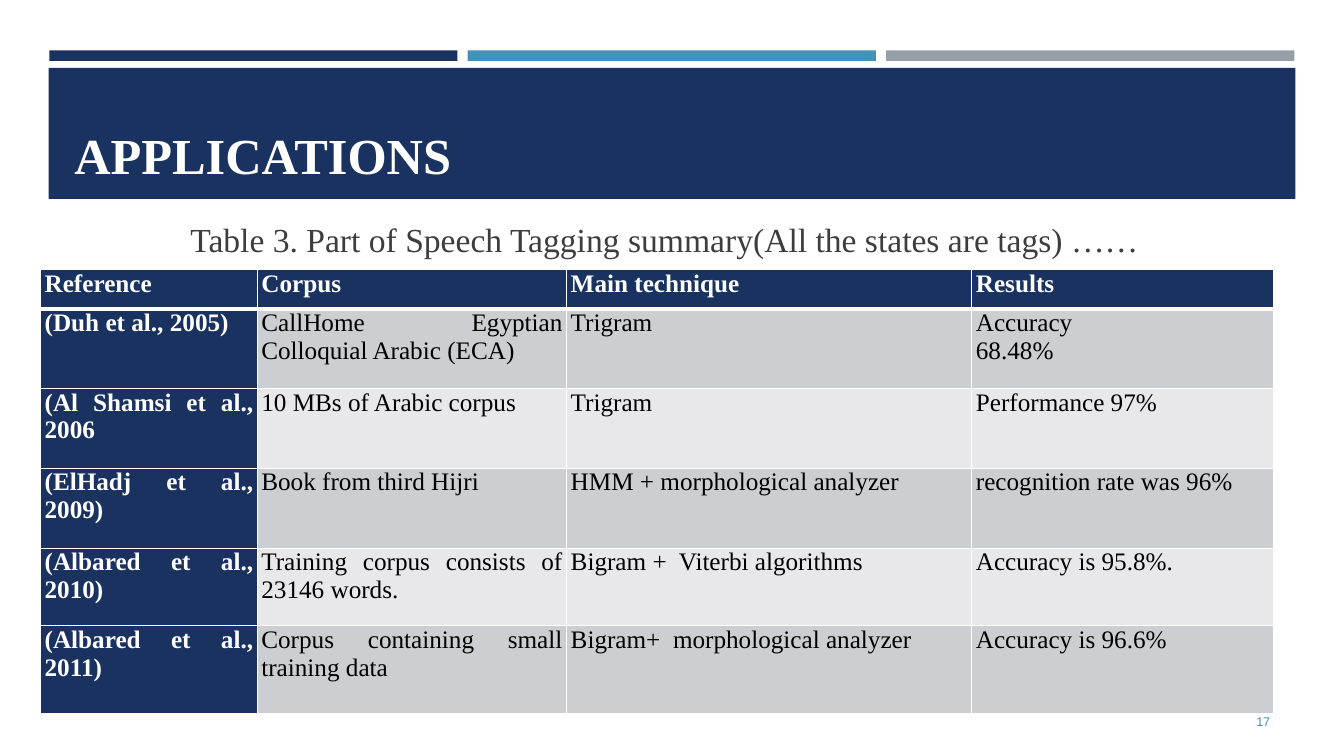
from lxml import etree
from pptx import Presentation
from pptx import util as u
from pptx.dml.color import RGBColor
from pptx.enum import shapes, text
from pptx.oxml import ns

Pt = u.Pt
SERIF, SANS = "Times New Roman", "Arial"
HUES = {
    "navy": "1A3260", "blue": "4590B8", "gray": "969FA7", "white": "FFFFFF",
    "black": "000000", "ink": "3D3D3D", "dark": "CDCED2", "light": "E8E8EA",
}
COLS = [154.8, 221, 289.4, 215.3]
ROWS = [28, 57, 57, 57, 55.5, 63]
DATA = [
    ["Reference", "Corpus", "Main technique", "Results"],
    ["(Duh et al., 2005)", "CallHome Egyptian Colloquial Arabic (ECA)",
     "Trigram", "Accuracy\n68.48%"],
    ["(Al Shamsi et al., 2006", "10 MBs of Arabic corpus",
     "Trigram", "Performance 97%"],
    ["(ElHadj et al., 2009)", "Book from third Hijri",
     "HMM + morphological analyzer", "recognition rate was 96%"],
    ["(Albared et al., 2010)", "Training corpus consists of 23146 words.",
     "Bigram +  Viterbi algorithms", "Accuracy is 95.8%."],
    ["(Albared et al., 2011)", "Corpus containing small training data",
     "Bigram+  morphological analyzer", "Accuracy is 96.6%"],
]


def tint(name):
    return RGBColor.from_string(HUES[name])


def add_run(para, words, size, hue, font=SERIF, bold=False):
    run = para.add_run()
    run.text = words
    run.font.size = Pt(size)
    run.font.name = font
    run.font.bold = bold
    run.font.color.rgb = tint(hue)


def add_bar(slide, box, hue):
    bar = slide.shapes.add_shape(
        shapes.MSO_SHAPE.RECTANGLE, *[Pt(n) for n in box])
    bar.shadow.inherit = False
    bar.fill.solid()
    bar.fill.fore_color.rgb = tint(hue)
    bar.line.fill.background()


def add_label(slide, box, words, size, hue, align, anchor, **style):
    frame = slide.shapes.add_textbox(*[Pt(n) for n in box]).text_frame
    frame.word_wrap = True
    frame.vertical_anchor = anchor
    para = frame.paragraphs[0]
    para.alignment = align
    add_run(para, words, size, hue, **style)


def add_edge(cell, side, width):
    props = cell._tc.get_or_add_tcPr()
    edge = etree.SubElement(props, ns.qn(f"a:ln{side}"), w=str(Pt(width)))
    fill = etree.SubElement(edge, ns.qn("a:solidFill"))
    etree.SubElement(fill, ns.qn("a:srgbClr"), val=HUES["white"])


def fill_cell(cell, words, row, col):
    head = row == 0 or col == 0
    cell.margin_left = cell.margin_right = Pt(2.9)
    cell.margin_top = cell.margin_bottom = 0
    # Borders come before the fill in the cell's XML
    for side in "LRTB":
        thick = (row, side) in [(0, "B"), (1, "T")]
        add_edge(cell, side, 3 if thick else 1)
    cell.fill.solid()
    band = "dark" if row % 2 else "light"
    cell.fill.fore_color.rgb = tint("navy" if head else band)
    frame = cell.text_frame
    for i, line in enumerate(words.split("\n")):
        para = frame.add_paragraph() if i else frame.paragraphs[0]
        para.alignment = text.PP_ALIGN.JUSTIFY
        add_run(para, line, 18, "white" if head else "black", bold=head)


def add_grid(slide, left, top):
    grid = slide.shapes.add_table(
        len(ROWS), len(COLS), Pt(left), Pt(top),
        Pt(sum(COLS)), Pt(sum(ROWS))).table
    for col, width in enumerate(COLS):
        grid.columns[col].width = Pt(width)
    for row, high in enumerate(ROWS):
        grid.rows[row].height = Pt(high)
        for col, words in enumerate(DATA[row]):
            fill_cell(grid.cell(row, col), words, row, col)


def main():
    deck = Presentation()
    deck.slide_width, deck.slide_height = Pt(960), Pt(540)
    slide = deck.slides.add_slide(deck.slide_layouts[6])
    align, anchor = text.PP_ALIGN, text.MSO_ANCHOR

    # Top stripes and title band
    for i, hue in enumerate(["navy", "blue", "gray"]):
        add_bar(slide, (35.2 + 298.9 * i, 36, 291.6, 7.5), hue)
    add_bar(slide, (34.8, 48.5, 890.6, 93.6), "navy")
    add_label(slide, (46, 55.4, 868.3, 80), "APPLICATIONS", 36, "white",
              align.LEFT, anchor.BOTTOM, bold=True)

    # Caption and table
    add_label(slide, (128.9, 152.6, 900.7, 12.2),
              "Table 3. Part of Speech Tagging summary"
              "(All the states are tags) ……",
              24, "ink", align.JUSTIFY, anchor.TOP)
    add_grid(slide, 29, 192.6)

    # Page number
    add_label(slide, (831.6, 501.1, 82.8, 28.8), "17", 9, "blue",
              align.RIGHT, anchor.MIDDLE, font=SANS)
    deck.save("out.pptx")


if __name__ == "__main__":
    main()
